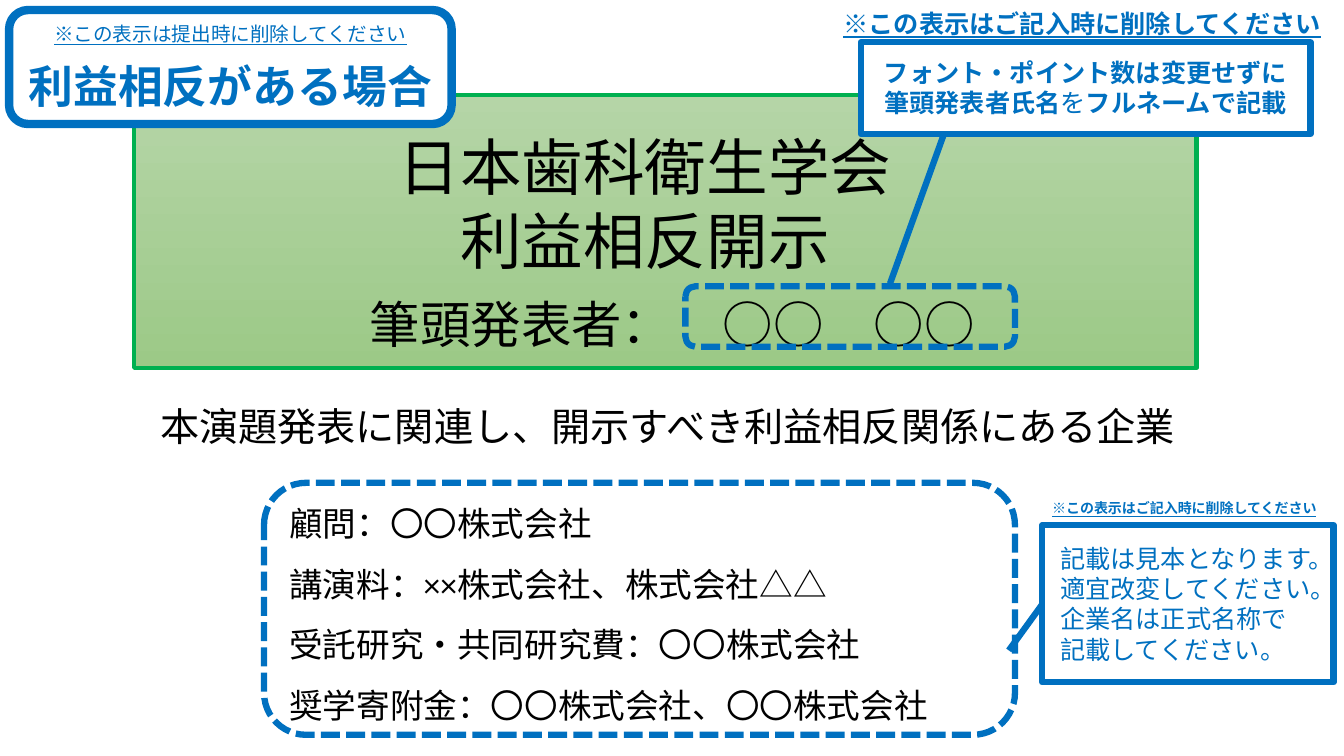
from lxml.etree import SubElement
from pptx import Presentation
from pptx.dml.color import RGBColor
from pptx.enum.dml import MSO_LINE
from pptx.enum.shapes import MSO_SHAPE
from pptx.enum.text import MSO_ANCHOR, MSO_AUTO_SIZE, PP_ALIGN
from pptx.oxml.ns import qn
from pptx.util import Pt

BLACK = RGBColor(0x00, 0x00, 0x00)
WHITE = RGBColor(0xFF, 0xFF, 0xFF)
BLUE = RGBColor(0x00, 0x70, 0xC0)
GREEN = RGBColor(0x00, 0xB0, 0x50)
PALE_GREEN = RGBColor(0xB5, 0xD5, 0xA7)
LEAF_GREEN = RGBColor(0x9C, 0xC9, 0x87)


class DisclosureSlide:
    font_name = "Calibri"

    def __init__(self, presentation):
        self.slide = presentation.slides.add_slide(presentation.slide_layouts[1])

    def add_line(self, frame, runs, size, color=BLACK, align=PP_ALIGN.LEFT,
                 bold=False, underline=False, spacing=1.0, before=0):
        first = frame.paragraphs[0]
        paragraph = frame.add_paragraph() if first.runs else first
        properties = paragraph._p.get_or_add_pPr()
        properties.set("marL", "0")
        properties.set("indent", "0")
        SubElement(properties, qn("a:buNone"))
        paragraph.alignment = align
        paragraph.line_spacing = spacing
        paragraph.space_before = Pt(before)
        for text, run_bold in [(runs, bold)] if isinstance(runs, str) else runs:
            run = paragraph.add_run()
            run.text = text
            run.font.name = self.font_name
            run.font.size = Pt(size)
            run.font.bold = run_bold
            run.font.underline = underline
            run.font.color.rgb = color

    def fill_frame(self, holder, lines, size, wrap=True, **style):
        frame = holder.text_frame
        frame.word_wrap = wrap
        frame.auto_size = MSO_AUTO_SIZE.NONE
        frame.vertical_anchor = MSO_ANCHOR.TOP
        for line in lines:
            self.add_line(frame, line, size, **style)

    def placeholder(self, index, box, lines, size, **style):
        holder = self.slide.placeholders[index]
        holder.left, holder.top, holder.width, holder.height = map(Pt, box)
        self.fill_frame(holder, lines, size, **style)
        return holder

    def text(self, box, lines, size, **style):
        self.fill_frame(self.slide.shapes.add_textbox(*map(Pt, box)), lines, size, **style)

    def shape(self, kind, box, line_color, line_width, fill=None, dashed=False, adjustments=()):
        shape = self.slide.shapes.add_shape(kind, *map(Pt, box))
        shape.shadow.inherit = False
        if fill is None:
            shape.fill.background()
        else:
            shape.fill.solid()
            shape.fill.fore_color.rgb = fill
        shape.line.color.rgb = line_color
        shape.line.width = Pt(line_width)
        if dashed:
            shape.line.dash_style = MSO_LINE.SQUARE_DOT
        for index, value in enumerate(adjustments):
            shape.adjustments[index] = value
        return shape

    def banner(self, box, behind):
        banner = self.shape(MSO_SHAPE.RECTANGLE, box, GREEN, 3)
        banner.fill.gradient()
        banner.fill.gradient_angle = 270
        for stop, color in zip(banner.fill.gradient_stops, (PALE_GREEN, LEAF_GREEN)):
            stop.color.rgb = color
        behind.element.addprevious(banner.element)

    def badge(self, box, notice, heading):
        frame = self.shape(MSO_SHAPE.ROUNDED_RECTANGLE, box, BLUE, 6, WHITE).text_frame
        frame.word_wrap = True
        frame.vertical_anchor = MSO_ANCHOR.MIDDLE
        self.add_line(frame, notice, 14, BLUE, PP_ALIGN.CENTER, underline=True)
        self.add_line(frame, heading, 32, BLUE, PP_ALIGN.CENTER, bold=True, before=9)

    def dashed_frame(self, box):
        self.shape(MSO_SHAPE.ROUNDED_RECTANGLE, box, BLUE, 4.5, dashed=True)

    def callout(self, box, adjustments):
        self.shape(MSO_SHAPE.LINE_CALLOUT_1, box, BLUE, 4.5, WHITE, adjustments=adjustments)


def main():
    presentation = Presentation()
    presentation.slide_width, presentation.slide_height = Pt(960), Pt(540)
    page = DisclosureSlide(presentation)
    delete_notice = "※この表示はご記入時に削除してください"

    title = page.placeholder(0, (208.8, 88.6, 504, 113.8), ["日本歯科衛生学会", "利益相反開示"],
                             44, align=PP_ALIGN.CENTER)
    page.banner((95.8, 67.7, 758.9, 195.1), title)
    page.text((228.2, 205.9, 504, 51), ["筆頭発表者：　○○　○○"], 36, align=PP_ALIGN.CENTER)
    page.text((107.3, 283.7, 845.3, 41), ["本演題発表に関連し、開示すべき利益相反関係にある企業"], 28)
    page.placeholder(1, (199.4, 341.3, 561.6, 181.4), [
        "顧問：〇〇株式会社",
        "講演料：××株式会社、株式会社△△",
        "受託研究・共同研究費：〇〇株式会社",
        "奨学寄附金：〇〇株式会社、〇〇株式会社",
    ], 24, spacing=1.5)

    page.badge((6.5, 7.2, 316.1, 81.4), "※この表示は提出時に削除してください", "利益相反がある場合")

    page.dashed_frame((489.6, 204.5, 235.4, 43.2))
    page.callout((614.9, 30.2, 321.1, 65.5), (1, 0.185, 2.631, 0.065))
    page.text((622.8, 37.4, 305.3, 51.1), [
        "フォント・ポイント数は変更せずに",
        [("筆頭発表者氏名", True), ("を", False), ("フルネームで記載", True)],
    ], 18, wrap=False, color=BLUE, align=PP_ALIGN.CENTER, bold=True)
    page.text((595.4, 2.2, 360, 28.8), [delete_notice], 18, wrap=False,
              color=BLUE, bold=True, underline=True)

    page.callout((744.5, 375.1, 208.1, 112.3), (0.506, -0.001, 0.797, -0.115))
    page.text((750.2, 384.5, 208.8, 94.3), [
        "記載は見本となります。",
        "適宜改変してください。",
        "企業名は正式名称で",
        "記載してください。",
    ], 18, color=BLUE)
    page.dashed_frame((188.6, 344.9, 536.4, 180))
    page.text((744.5, 353.5, 217.4, 19.4), [delete_notice], 10,
              color=BLUE, bold=True, underline=True)

    presentation.save("out.pptx")


if __name__ == "__main__":
    main()
